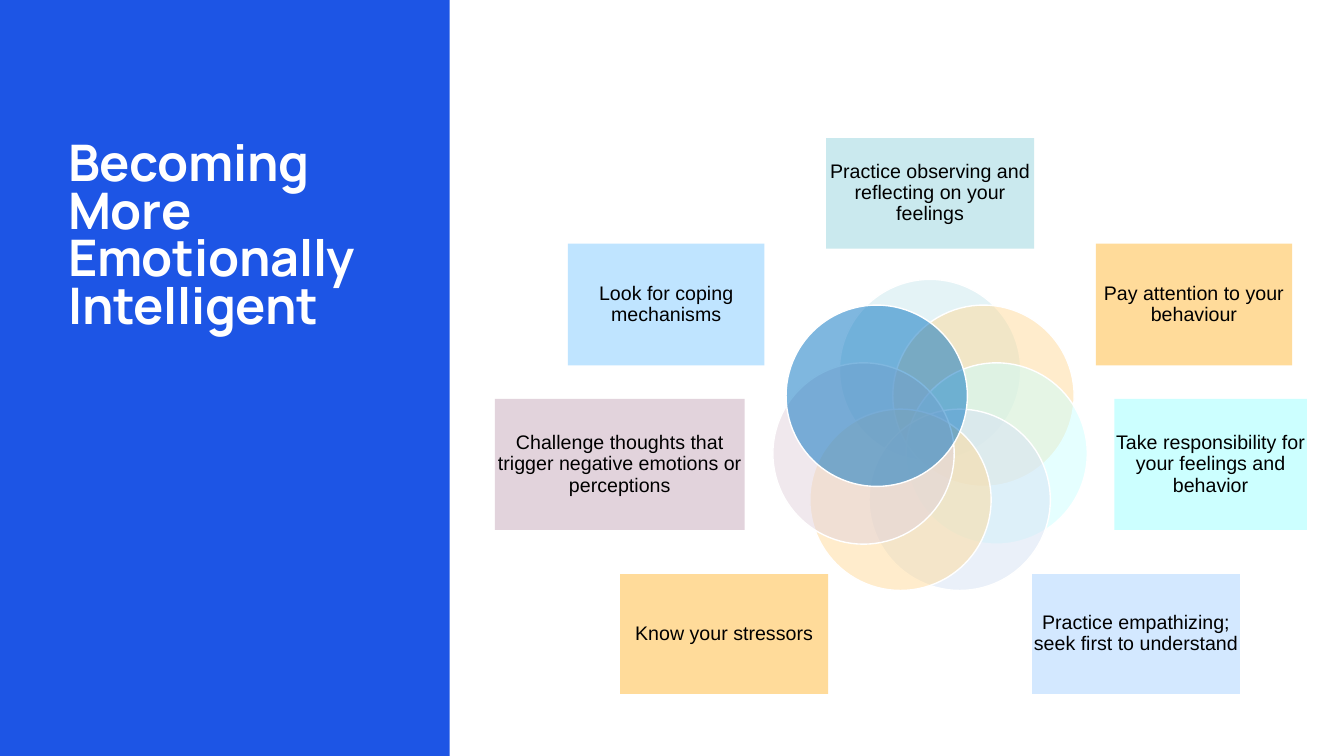
import math

from lxml import etree
from pptx import Presentation
from pptx import util as u
from pptx.dml.color import RGBColor
from pptx.enum import shapes, text
from pptx.oxml.ns import qn

WHITE, BLACK, BLUE = "FFFFFF", "000000", "1D55E5"
SLIDE_W, SLIDE_H, PANEL_W = 33.87, 19.05, 11.33
RING_RADIUS, CIRCLE = 1.72, 4.57

# Clockwise from the top: wording, circle fill, label fill,
# label centre measured from the ring's centre, label size (cm)
HABITS = [
    ("Practice observing and reflecting on your feelings",
     "CAE9EE", "CAE9EE", (0, -6.17), (5.24, 2.79)),
    ("Pay attention to your behaviour",
     "FFDB9A", "FFDB9A", (6.65, -3.37), (4.95, 3.07)),
    ("Take responsibility for your feelings and behavior",
     "CCFFFF", "CCFFFF", (7.07, 0.66), (4.85, 3.3)),
    ("Practice empathizing; seek first to understand",
     "D7E2F5", "D3E8FF", (5.19, 4.93), (5.24, 3.02)),
    ("Know your stressors",
     "FFDB9A", "FFDB9A", (-5.19, 4.93), (5.24, 3.02)),
    ("Challenge thoughts that trigger negative emotions or perceptions",
     "E2D3DC", "E2D3DC", (-7.82, 0.66), (6.3, 3.3)),
    ("Look for coping mechanisms",
     "0070C0", "BFE4FF", (-6.65, -3.37), (4.95, 3.07)),
]


def rgb(value):
    return RGBColor.from_string(value)


def add_filled(slide, kind, left, top, width, height, fill):
    """Add a flat preset shape without outline or shadow; lengths in cm."""
    shape = slide.shapes.add_shape(
        kind, u.Cm(left), u.Cm(top), u.Cm(width), u.Cm(height))
    shape.shadow.inherit = False
    shape.fill.solid()
    shape.fill.fore_color.rgb = rgb(fill)
    shape.line.fill.background()
    return shape


def write(frame, wording, font, size, color, spacing, bold=False):
    frame.word_wrap = True
    frame.text = wording
    paragraph = frame.paragraphs[0]
    paragraph.line_spacing = spacing
    run = paragraph.runs[0]
    run.font.name = font
    run.font.size = u.Pt(size)
    run.font.bold = bold
    run.font.color.rgb = rgb(color)
    return paragraph


def add_title_panel(slide, left, top, width, height):
    add_filled(slide, shapes.MSO_SHAPE.RECTANGLE, left, top, width, height, BLUE)
    title = slide.shapes.add_textbox(
        u.Cm(left + 1.47), u.Cm(top + 3.48), u.Cm(width - 2.41), u.Cm(height - 6.02))
    paragraph = write(title.text_frame, "Becoming More Emotionally Intelligent",
                      "Manrope", 36, WHITE, 0.79, bold=True)
    paragraph.runs[0].font._element.set("spc", "-20")


def add_circle(slide, center_x, center_y, fill):
    circle = add_filled(slide, shapes.MSO_SHAPE.OVAL, center_x - CIRCLE / 2,
                        center_y - CIRCLE / 2, CIRCLE, CIRCLE, fill)
    circle.line.color.rgb = rgb(WHITE)
    circle.line.width = u.Pt(1)
    color = circle._element.spPr.find(qn("a:solidFill")).find(qn("a:srgbClr"))
    etree.SubElement(color, qn("a:alpha"), val="50000")


def add_label(slide, center_x, center_y, width, height, wording, fill):
    label = add_filled(slide, shapes.MSO_SHAPE.RECTANGLE, center_x - width / 2,
                       center_y - height / 2, width, height, fill)
    frame = label.text_frame
    frame.margin_left = frame.margin_right = 0
    frame.margin_top = frame.margin_bottom = 0
    frame.vertical_anchor = text.MSO_ANCHOR.MIDDLE
    paragraph = write(frame, wording, "Arial", 14, BLACK, 0.9)
    paragraph.alignment = text.PP_ALIGN.CENTER


def add_habit_ring(slide, left, top, width, height):
    center_x = left + width / 2 + 0.84
    center_y = top + height / 2 + 1.52
    for index, (wording, circle_fill, label_fill, offset, size) in enumerate(HABITS):
        angle = 2 * math.pi * index / len(HABITS)
        add_circle(slide, center_x + RING_RADIUS * math.sin(angle),
                   center_y - RING_RADIUS * math.cos(angle), circle_fill)
        add_label(slide, center_x + offset[0], center_y + offset[1], *size,
                  wording, label_fill)


def main():
    deck = Presentation()
    deck.slide_width, deck.slide_height = u.Cm(SLIDE_W), u.Cm(SLIDE_H)
    slide = deck.slides.add_slide(deck.slide_layouts[6])
    add_title_panel(slide, 0, 0, PANEL_W, SLIDE_H)
    add_habit_ring(slide, PANEL_W, 0, SLIDE_W - PANEL_W, SLIDE_H)
    deck.save("out.pptx")


if __name__ == "__main__":
    main()
